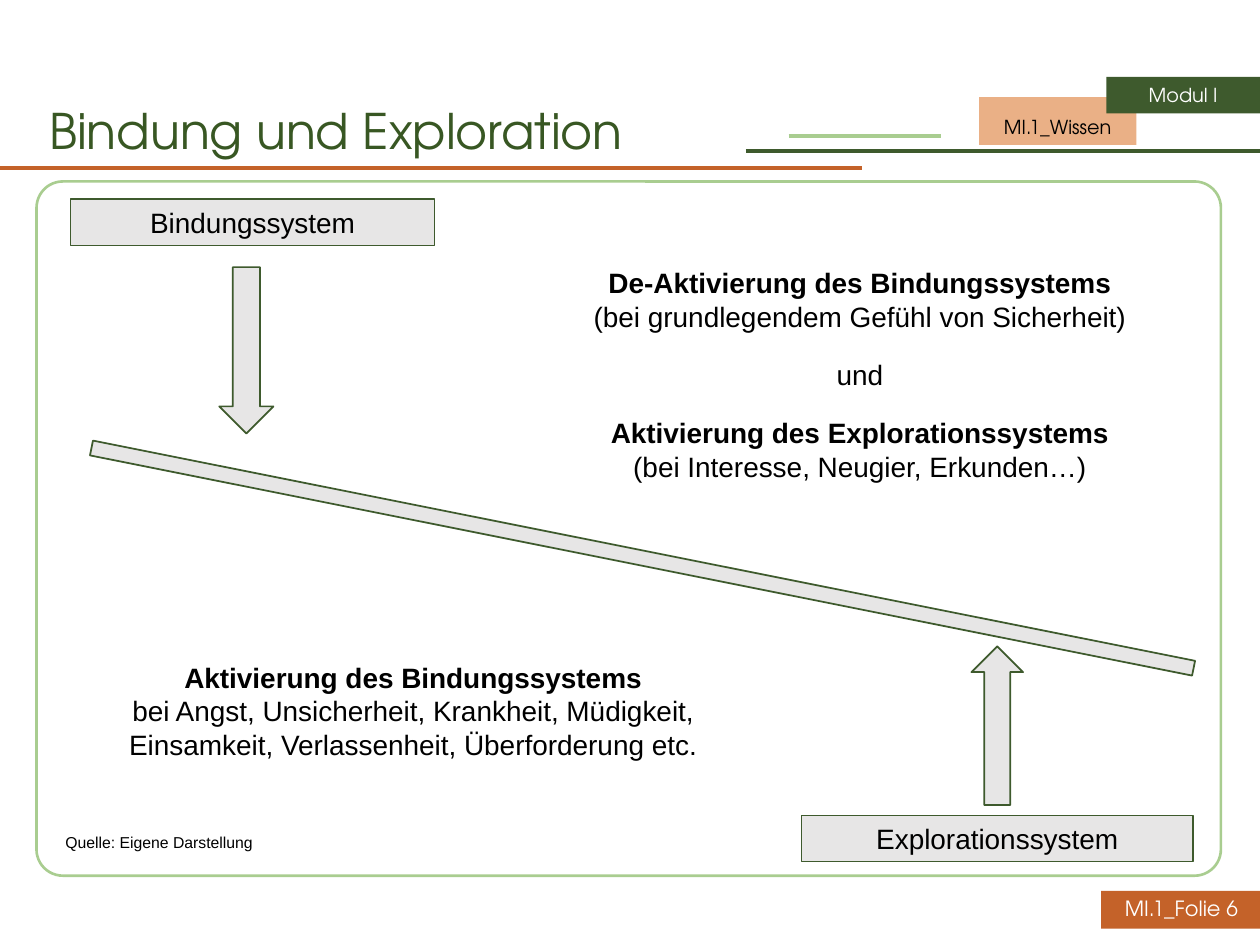
from dataclasses import dataclass
from typing import Optional

from lxml.etree import SubElement
from pptx import Presentation
from pptx.dml.color import RGBColor
from pptx.enum.shapes import MSO_CONNECTOR, MSO_SHAPE as Shape
from pptx.enum.text import MSO_ANCHOR as Anchor, PP_ALIGN as Align
from pptx.oxml.ns import qn
from pptx.util import Inches, Pt

DARK_GREEN = RGBColor(0x3E, 0x5A, 0x2D)
TITLE_GREEN = RGBColor(0x38, 0x57, 0x23)
LIGHT_GREEN = RGBColor(0xA9, 0xCD, 0x90)
ORANGE = RGBColor(0xC4, 0x62, 0x29)
PEACH = RGBColor(0xEA, 0xB0, 0x86)
GREY = RGBColor(0xE7, 0xE6, 0xE6)
WHITE = RGBColor(0xFF, 0xFF, 0xFF)
BLACK = RGBColor(0, 0, 0)
HEADING_FONT = "TeX Gyre Adventor"
BODY_FONT = "Arial"


@dataclass(frozen=True)
class Line:
    text: str
    size: float = 16
    bold: bool = False
    color: RGBColor = BLACK
    font: str = BODY_FONT
    align: Align = Align.CENTER
    before: float = 0
    spacing: Optional[float] = None


@dataclass(frozen=True)
class Block:
    box: tuple[float, float, float, float]
    fill: Optional[RGBColor] = None
    border: Optional[RGBColor] = None
    width: float = 1
    kind: Shape = Shape.RECTANGLE
    rotation: float = 0
    corner: Optional[float] = None
    line: Optional[Line] = None


@dataclass(frozen=True)
class Rule:
    left: float
    right: float
    y: float
    color: RGBColor


@dataclass(frozen=True)
class Note:
    box: tuple[float, float, float, float]
    lines: tuple[Line, ...]
    wrap: bool = True


def write_lines(frame, lines: tuple[Line, ...]) -> None:
    for index, line in enumerate(lines):
        paragraph = frame.add_paragraph() if index else frame.paragraphs[0]
        paragraph.alignment = line.align
        if line.before:
            paragraph.space_before = Pt(line.before)
        if line.spacing:
            paragraph.line_spacing = line.spacing
        run = paragraph.add_run()
        run.text = line.text
        run.font.name = line.font
        run.font.size = Pt(line.size)
        run.font.bold = line.bold
        run.font.color.rgb = line.color


def draw_block(slide, block: Block) -> None:
    shape = slide.shapes.add_shape(block.kind, *map(Inches, block.box))
    shape.shadow.inherit = False
    shape.rotation = block.rotation
    if block.corner is not None:
        shape.adjustments[0] = block.corner
    if block.fill is None:
        shape.fill.background()
    else:
        shape.fill.solid()
        shape.fill.fore_color.rgb = block.fill
    if block.border is None:
        shape.line.fill.background()
    else:
        shape.line.color.rgb = block.border
        shape.line.width = Pt(block.width)
    if block.line:
        shape.text_frame.vertical_anchor = Anchor.MIDDLE
        write_lines(shape.text_frame, (block.line,))


def draw_rule(slide, rule: Rule) -> None:
    connector = slide.shapes.add_connector(
        MSO_CONNECTOR.STRAIGHT,
        Inches(rule.left), Inches(rule.y), Inches(rule.right), Inches(rule.y),
    )
    connector.line.color.rgb = rule.color
    connector.line.width = Pt(2.25)
    SubElement(connector.element.spPr, qn("a:effectLst"))


def draw_note(slide, note: Note) -> None:
    frame = slide.shapes.add_textbox(*map(Inches, note.box)).text_frame
    frame.word_wrap = note.wrap
    write_lines(frame, note.lines)


MODULE_TAGS = (
    Block((7.77, 0.77, 1.25, 0.38), PEACH,
          line=Line("MI.1_Wissen", 11, font=HEADING_FONT, spacing=1.5)),
    Block((8.78, 0.61, 1.22, 0.29), DARK_GREEN,
          line=Line("Modul I", 11, color=WHITE, font=HEADING_FONT)),
)
HEADER_RULES = (
    Rule(0, 6.84, 1.33, ORANGE),
    Rule(5.92, 10, 1.2, DARK_GREEN),
    Rule(6.26, 7.47, 1.08, LIGHT_GREEN),
)
FRAME_AND_FOOTER = (
    Block((0.29, 1.44, 9.4, 5.51), border=LIGHT_GREEN, width=1.5,
          kind=Shape.ROUNDED_RECTANGLE, corner=0.038),
    Block((8.74, 7.07, 1.26, 0.3), ORANGE),
)
SEESAW = (
    Block((0.64, 4.37, 8.92, 0.12), GREY, DARK_GREEN, rotation=11.3),
    Block((7.71, 5.13, 0.41, 1.26), GREY, DARK_GREEN, kind=Shape.UP_ARROW),
    Block((1.74, 2.12, 0.43, 1.32), GREY, DARK_GREEN, kind=Shape.UP_ARROW, rotation=180),
    Block((0.56, 1.58, 2.89, 0.37), GREY, DARK_GREEN, 0.75, line=Line("Bindungssystem")),
    Block((6.36, 6.47, 3.11, 0.37), GREY, DARK_GREEN, 0.75, line=Line("Explorationssystem")),
    Block((0.42, 6.56, 1.75, 0.25), WHITE, WHITE,
          line=Line("Quelle: Eigene Darstellung", 9, align=Align.LEFT)),
)
NOTES = (
    Note((0.78, 5.19, 5, 0.91), (
        Line("Aktivierung des Bindungssystems", bold=True),
        Line("bei Angst, Unsicherheit, Krankheit, Müdigkeit, "
             "Einsamkeit, Verlassenheit, Überforderung etc."),
    )),
    Note((4.06, 2.06, 5.53, 1.88), (
        Line("De-Aktivierung des Bindungssystems", bold=True),
        Line("(bei grundlegendem Gefühl von Sicherheit)"),
        Line("und", before=14),
        Line("Aktivierung des Explorationssystems", bold=True, before=14),
        Line("(bei Interesse, Neugier, Erkunden…)"),
    )),
    Note((8.83, 7.06, 1.17, 0.3), (
        Line("MI.1_Folie 6", 12, color=WHITE, font=HEADING_FONT, align=Align.LEFT),
    ), wrap=False),
)


def main() -> None:
    deck = Presentation()
    deck.slide_width, deck.slide_height = Inches(10), Inches(7.5)
    slide = deck.slides.add_slide(deck.slide_layouts[5])

    title = slide.shapes.title
    title.left, title.top, title.width, title.height = map(Inches, (0.29, 0.8, 8.62, 1.45))
    title.text_frame.vertical_anchor = Anchor.TOP
    write_lines(title.text_frame, (
        Line("Bindung und Exploration", 28, color=TITLE_GREEN, font=HEADING_FONT,
             align=Align.LEFT, spacing=0.9),
    ))

    for rule in HEADER_RULES:
        draw_rule(slide, rule)
    for block in MODULE_TAGS + FRAME_AND_FOOTER + SEESAW:
        draw_block(slide, block)
    for note in NOTES:
        draw_note(slide, note)

    deck.save("out.pptx")


if __name__ == "__main__":
    main()
